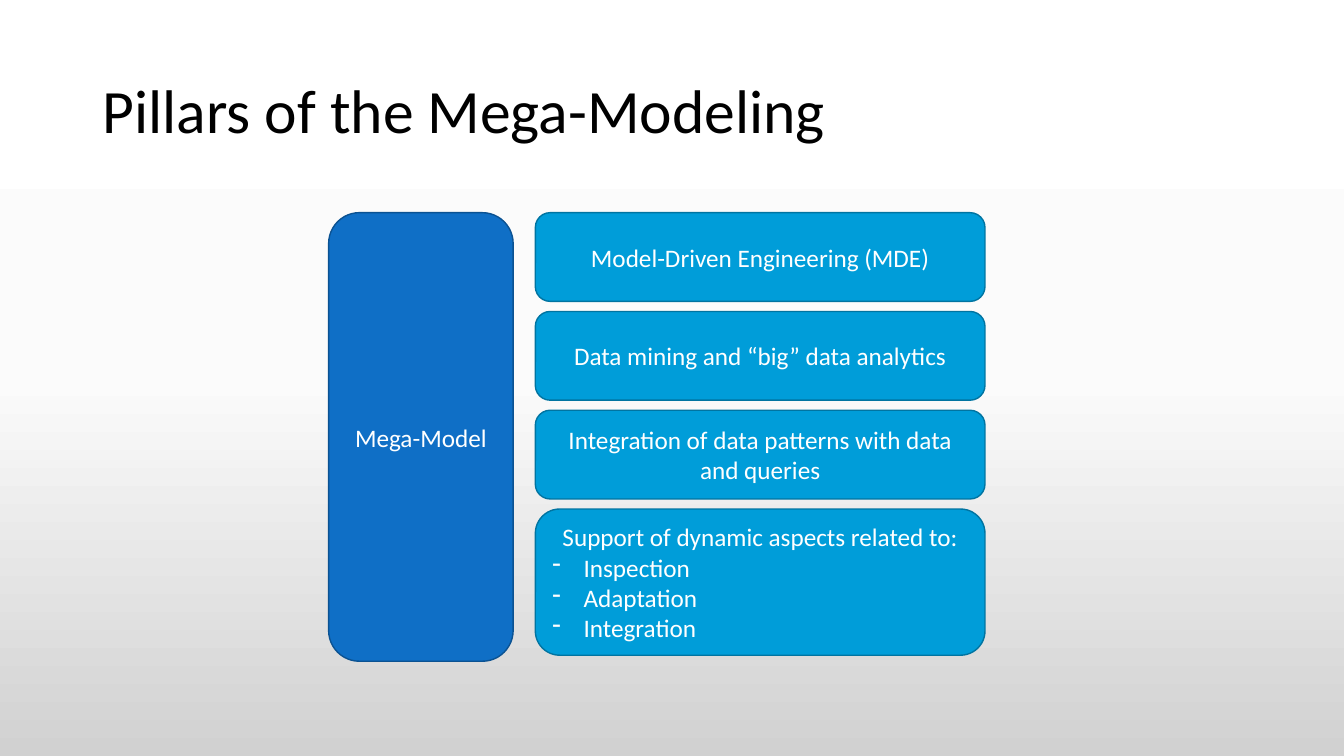
import copy

import lxml.etree
import pptx
import pptx.dml.color
import pptx.enum.shapes
import pptx.enum.text
import pptx.oxml.ns
import pptx.util

Inches = pptx.util.Inches
ALIGN = pptx.enum.text.PP_ALIGN
MIDDLE = pptx.enum.text.MSO_ANCHOR.MIDDLE

HEADING = "Pillars of the Mega-Modeling"
MODEL = "Mega-Model"
PILLARS = [
    ("Model-Driven Engineering (MDE)", []),
    ("Data mining and “big” data analytics", []),
    ("Integration of data patterns with data and queries", []),
    ("Support of dynamic aspects related to:", ["Inspection", "Adaptation", "Integration"]),
]
COLORS = {
    "heading": "000000",
    "label": "FFFFFF",
    "model": "0F6FC6",
    "model_edge": "0B5292",
    "pillar": "009DD9",
    "pillar_edge": "0074A1",
}
BACKDROP = [(0, "FFFFFF"), (0.5, "FBFBFB"), (1, "D1D1D1")]

TOP = 2.11
MODEL_LEFT, MODEL_WIDTH, MODEL_HEIGHT = 3.26, 1.83, 4.45
PILLAR_LEFT, PILLAR_WIDTH = 5.31, 4.46
PILLAR_HEIGHT, LIST_PILLAR_HEIGHT, GAP = 0.88, 1.45, 0.1
INDENT = 0.31


def rgb(name):
    return pptx.dml.color.RGBColor.from_string(COLORS[name])


def apply(target, formats):
    for attribute, value in formats.items():
        setattr(target, attribute, value)


def write(paragraph, wording, size, color, **formats):
    paragraph.text = wording
    apply(paragraph, formats)
    apply(paragraph.font, {"name": "Calibri", "size": pptx.util.Pt(size)})
    paragraph.font.color.rgb = rgb(color)


def add_dash(paragraph):
    properties = paragraph._p.get_or_add_pPr()
    properties.set("marL", str(Inches(INDENT)))
    properties.set("indent", str(-Inches(INDENT)))
    dash = lxml.etree.SubElement(properties, pptx.oxml.ns.qn("a:buChar"))
    dash.set("char", "-")


def add_block(slide, box, color, label, aspects=()):
    block = slide.shapes.add_shape(
        pptx.enum.shapes.MSO_SHAPE.ROUNDED_RECTANGLE, *map(Inches, box))
    block.shadow.inherit = False
    block.fill.solid()
    block.fill.fore_color.rgb = rgb(color)
    block.line.color.rgb = rgb(color + "_edge")
    block.line.width = pptx.util.Pt(1)
    frame = block.text_frame
    apply(frame, {"word_wrap": True, "vertical_anchor": MIDDLE})
    write(frame.paragraphs[0], label, 18, "label", alignment=ALIGN.CENTER)
    for aspect in aspects:
        paragraph = frame.add_paragraph()
        write(paragraph, aspect, 18, "label", alignment=ALIGN.LEFT)
        add_dash(paragraph)


def paint_backdrop(slide):
    fill = slide.background.fill
    fill.gradient()
    fill.gradient_angle = 270
    stops = next(slide.element.iter(pptx.oxml.ns.qn("a:gsLst")))
    stops.insert(1, copy.deepcopy(stops[0]))
    for stop, (position, color) in zip(fill.gradient_stops, BACKDROP):
        stop.position = position
        stop.color.rgb = pptx.dml.color.RGBColor.from_string(color)


def main():
    deck = pptx.Presentation()
    apply(deck, {"slide_width": Inches(13.33), "slide_height": Inches(7.5)})
    slide = deck.slides.add_slide(deck.slide_layouts.get_by_name("Title Only"))
    paint_backdrop(slide)

    heading = slide.shapes.title
    apply(heading, {"left": Inches(0.92), "top": Inches(0.4),
                    "width": Inches(11.5), "height": Inches(1.45)})
    apply(heading.text_frame, {"word_wrap": True, "vertical_anchor": MIDDLE,
                               "auto_size": pptx.enum.text.MSO_AUTO_SIZE.NONE})
    write(heading.text_frame.paragraphs[0], HEADING, 44, "heading",
          alignment=ALIGN.LEFT, line_spacing=0.9)

    add_block(slide, (MODEL_LEFT, TOP, MODEL_WIDTH, MODEL_HEIGHT), "model", MODEL)
    top = TOP
    for label, aspects in PILLARS:
        height = LIST_PILLAR_HEIGHT if aspects else PILLAR_HEIGHT
        add_block(slide, (PILLAR_LEFT, top, PILLAR_WIDTH, height), "pillar", label, aspects)
        top += height + GAP

    deck.save("out.pptx")


if __name__ == "__main__":
    main()
